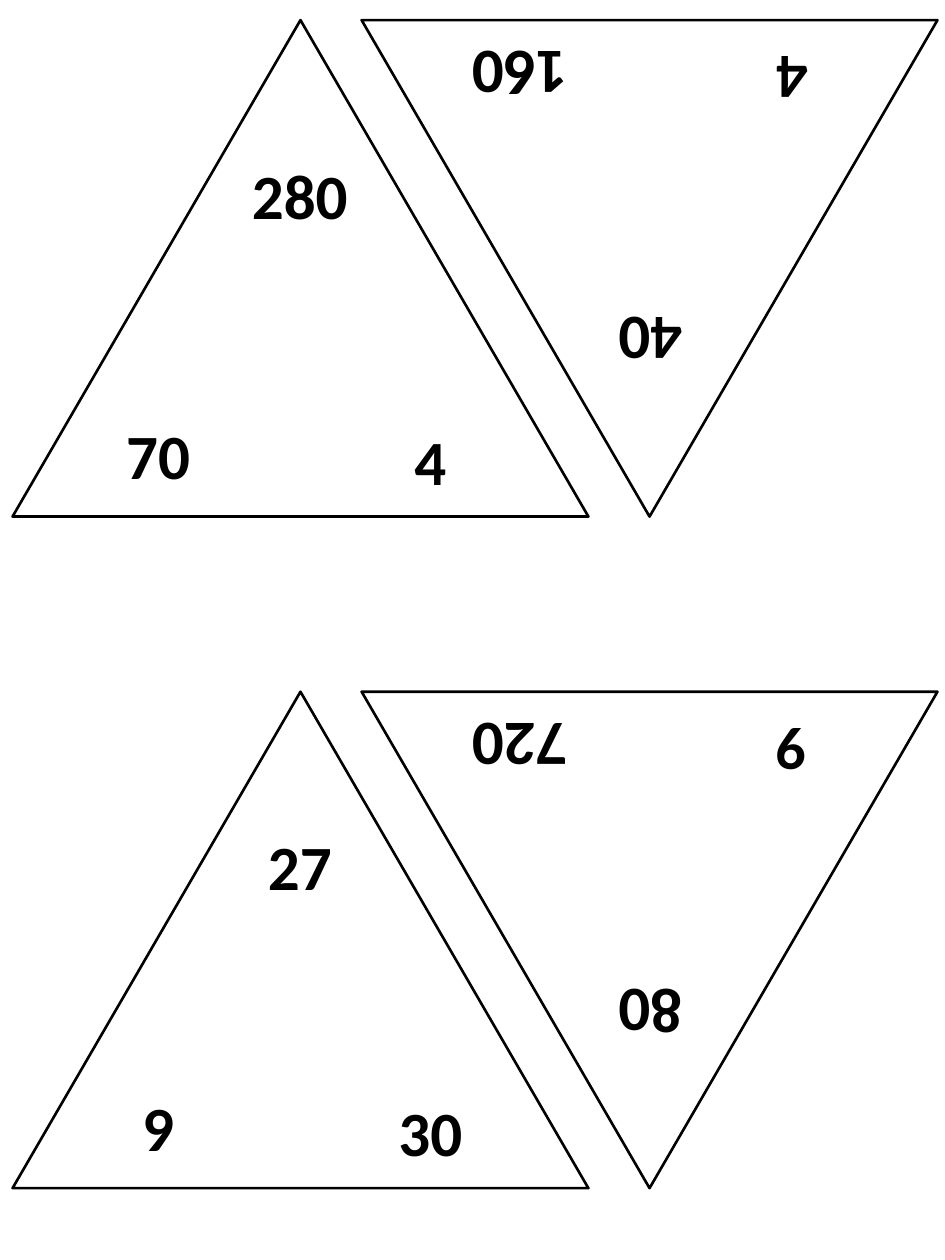
from pptx import Presentation
from pptx.dml.color import RGBColor
from pptx.enum.shapes import MSO_SHAPE as Preset
from pptx.enum.text import MSO_AUTO_SIZE as AutoSize, PP_ALIGN as Align
from pptx.util import Emu, Pt

PX = 9144
COLORS = {"paper": "FFFFFF", "ink": "000000"}
FONT = {"name": "Calibri", "size": Pt(36), "bold": True}
FRAME = {"word_wrap": True, "auto_size": AutoSize.SHAPE_TO_FIT_TEXT}

CARD_WIDTH, CARD_HEIGHT = 457, 394
LEFT, TOP = 10, 16
COLUMN_STEP, ROW_STEP = 277, 533
LABEL_HEIGHT = 71
LABEL_SLOTS = [(165, 103, 126), (49, 310, 133), (257, 314, 149)]
CARD_ROWS = [
    [("280", "70", "4"), ("40", "4", "160")],
    [("27", "9", "30"), ("80", "9", "720")],
]


def px(*lengths):
    return [Emu(length * PX) for length in lengths]


def color(name):
    return RGBColor.from_string(COLORS[name])


def apply(target, values):
    for name, value in values.items():
        setattr(target, name, value)


class TriangleSheet:
    def __init__(self, slide):
        self.slide = slide
        self.font = FONT
        self.line_width = Pt(1.5)

    def triangle(self, group, left, top):
        shape = group.shapes.add_shape(
            Preset.ISOSCELES_TRIANGLE, *px(left, top, CARD_WIDTH, CARD_HEIGHT)
        )
        shape.shadow.inherit = False
        shape.fill.solid()
        shape.fill.fore_color.rgb = color("paper")
        shape.line.color.rgb = color("ink")
        shape.line.width = self.line_width

    def label(self, group, text, left, top, width):
        box = group.shapes.add_textbox(*px(left, top, width, LABEL_HEIGHT))
        apply(box.text_frame, FRAME)
        paragraph = box.text_frame.paragraphs[0]
        paragraph.alignment = Align.CENTER
        run = paragraph.add_run()
        run.text = text
        apply(run.font, self.font)
        run.font.color.rgb = color("ink")

    def card(self, numbers, left, top, rotation):
        group = self.slide.shapes.add_group_shape()
        self.triangle(group, left, top)
        for number, (x, y, width) in zip(numbers, LABEL_SLOTS):
            self.label(group, number, left + x, top + y, width)
        group.rotation = rotation


def main():
    presentation = Presentation()
    presentation.slide_width, presentation.slide_height = px(750, 1000)
    slide = presentation.slides.add_slide(presentation.slide_layouts[6])
    sheet = TriangleSheet(slide)
    for row, cards in enumerate(CARD_ROWS):
        for column, numbers in enumerate(cards):
            sheet.card(
                numbers,
                LEFT + column * COLUMN_STEP,
                TOP + row * ROW_STEP,
                column * 180,
            )
    presentation.save("out.pptx")


if __name__ == "__main__":
    main()
